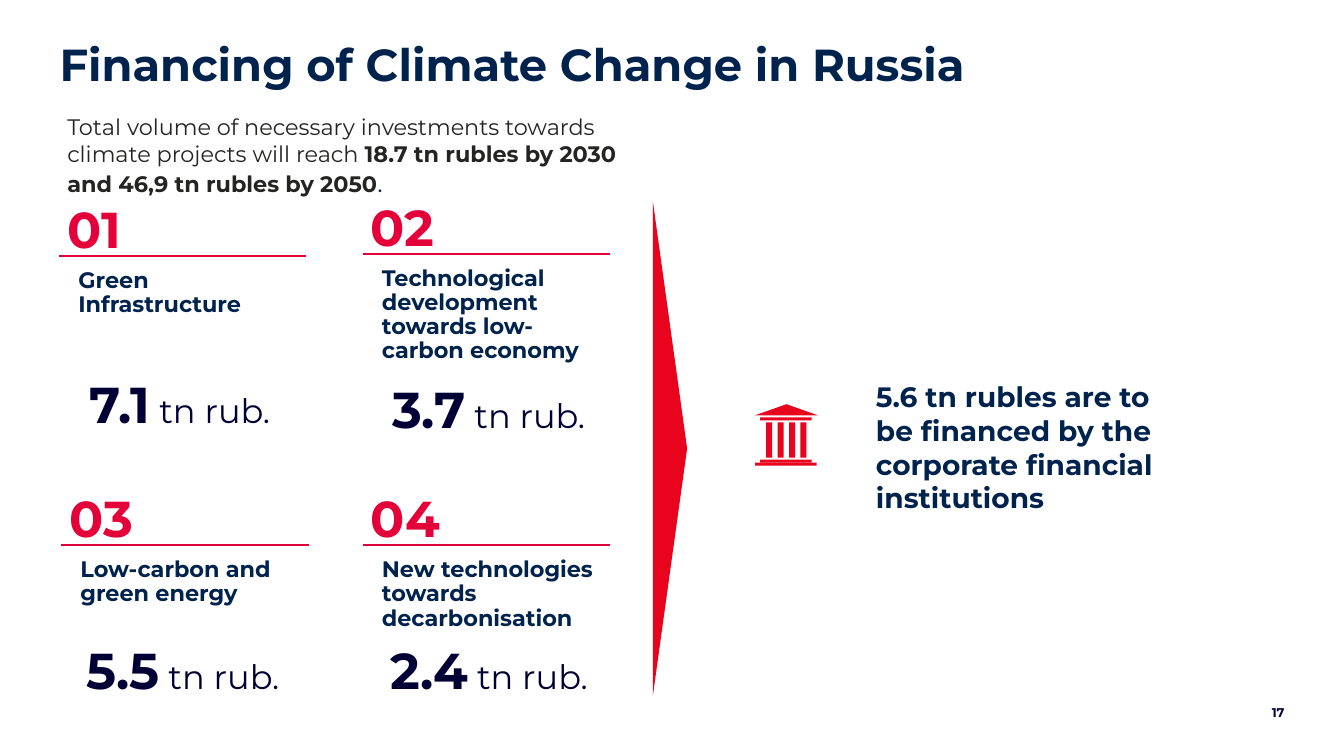
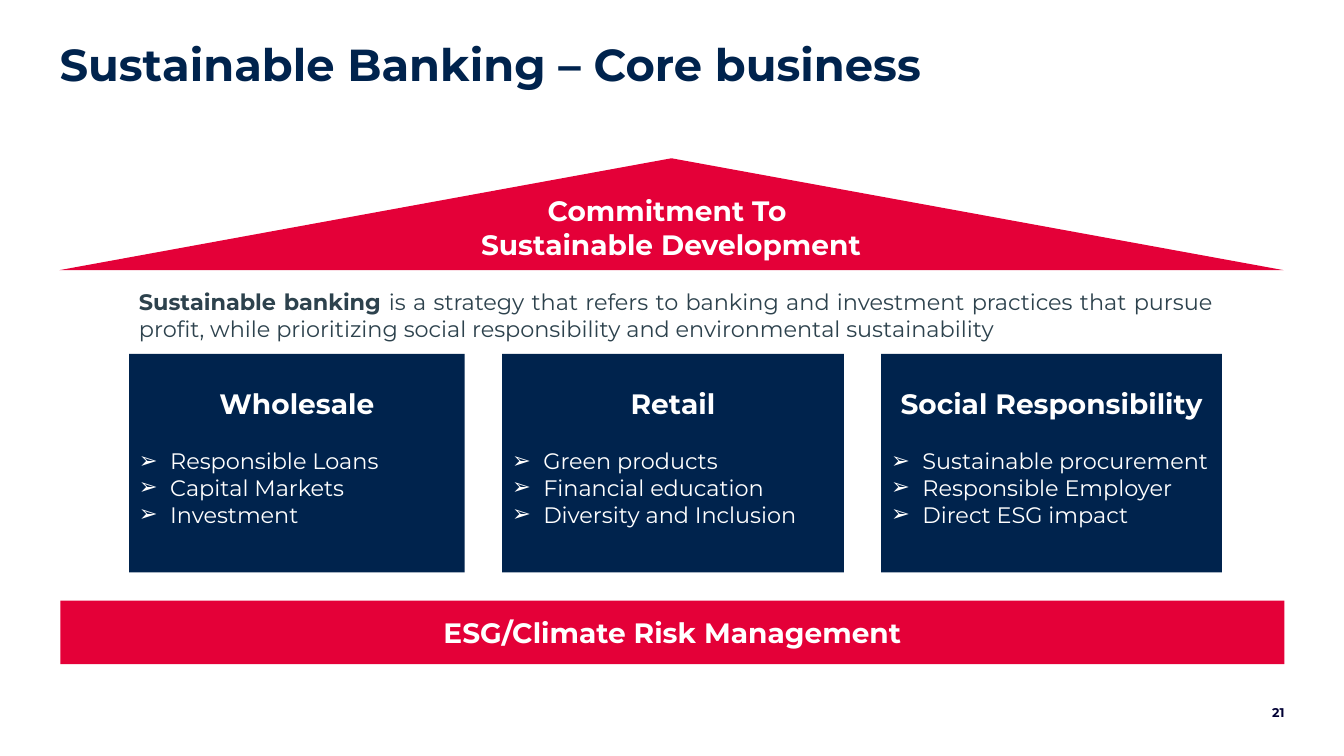
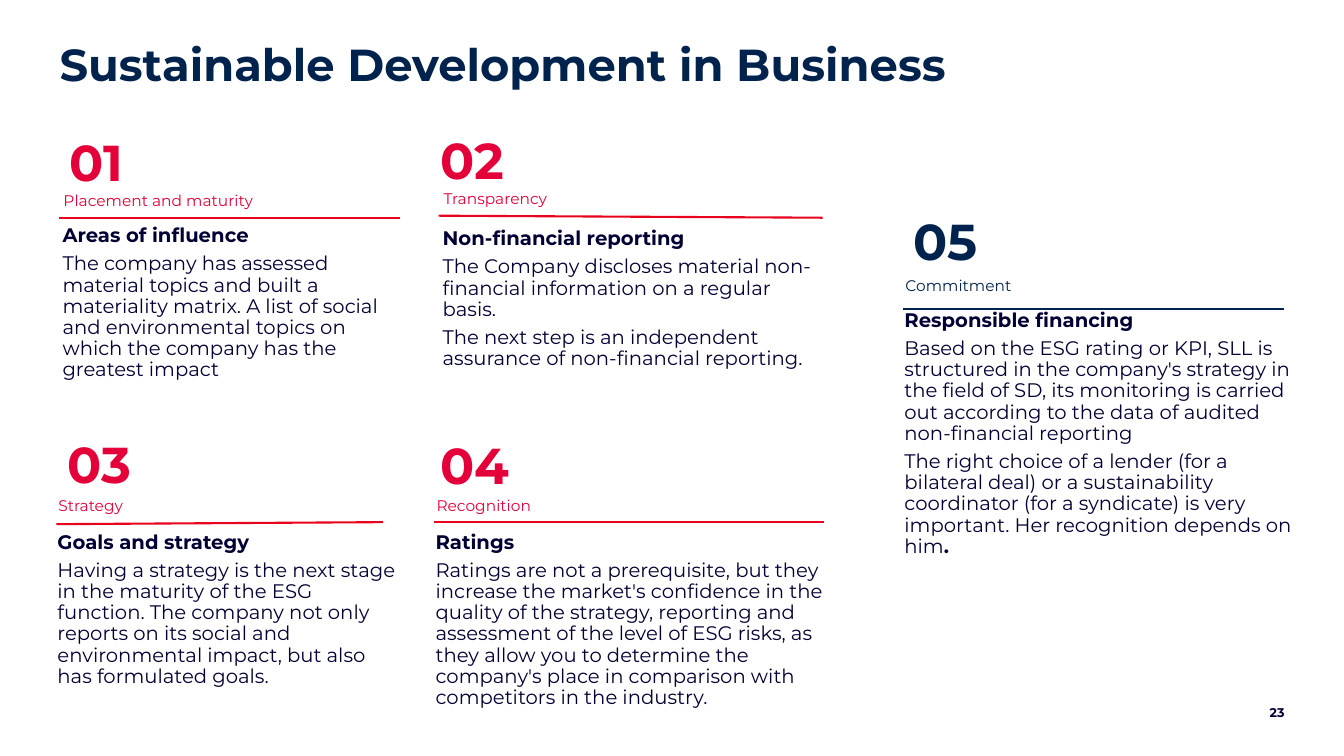
import pptx
import pptx.dml.color
import pptx.enum.shapes
import pptx.enum.text
import pptx.oxml.ns
import pptx.util
from lxml import etree

Inches = pptx.util.Inches
Pt = pptx.util.Pt
ALIGN = pptx.enum.text.PP_ALIGN
ANCHOR = pptx.enum.text.MSO_ANCHOR
AUTO_SIZE = pptx.enum.text.MSO_AUTO_SIZE
SHAPE = pptx.enum.shapes.MSO_SHAPE

FONT = "Montserrat"
TITLE_ONLY = 5
COLORS = {
    "navy": "00234D",
    "ink": "010034",
    "crimson": "E40038",
    "red": "E9041E",
    "graphite": "242423",
    "slate": "2D424D",
    "white": "FFFFFF",
}

INVESTMENTS = [
    ("01", "Green Infrastructure", "7.1", (0.59, 2.54), (0.2, 1.11, 2.05)),
    ("02", "Technological development towards low-carbon economy", "3.7",
     (3.6, 2.52), (0.19, 1.18, 2.15)),
    ("03", "Low-carbon and green energy", "5.5", (0.61, 5.41), (0.15, 0.88, 2.13)),
    ("04", "New technologies towards decarbonisation", "2.4",
     (3.6, 5.41), (0.17, 0.88, 2.18)),
]

PILLARS = [
    ("Wholesale", ["Responsible Loans", "Capital Markets", "Investment"],
     (1.28, 3.51, 3.33, 2.17)),
    ("Retail", ["Green products", "Financial education", "Diversity and Inclusion"],
     (4.98, 3.51, 3.39, 2.17)),
    ("Social Responsibility",
     ["Sustainable procurement", "Responsible Employer", "Direct ESG impact"],
     (8.74, 3.51, 3.38, 2.17)),
]

TOPICS = [
    {"number": "01", "label": "Placement and maturity", "heading": "Areas of influence",
     "body": ["The company has assessed material topics and built a materiality matrix. "
              "A list of social and environmental topics on which the company has the "
              "greatest impact"],
     "box": (0.62, 2.24, 3.35, 1.9), "label_rise": 0.32, "number_shift": (-0.03, -0.92),
     "rule": (0.59, 2.16, 3.97, 2.16)},
    {"number": "02", "label": "Transparency", "heading": "Non-financial reporting",
     "body": ["The Company discloses material non-financial information on a regular basis.",
              "The next step is an independent assurance of non-financial reporting."],
     "box": (4.39, 2.27, 3.77, 1.76), "label_rise": 0.37, "number_shift": (-0.12, -0.97),
     "rule": (4.35, 2.14, 8.16, 2.16)},
    {"number": "03", "label": "Strategy", "heading": "Goals and strategy",
     "body": ["Having a strategy is the next stage in the maturity of the ESG function. "
              "The company not only reports on its social and environmental impact, but "
              "also has formulated goals."],
     "box": (0.57, 5.28, 3.4, 2.31), "label_rise": 0.34, "number_shift": (0, -0.96),
     "rule": (0.56, 5.2, 3.8, 5.18)},
    {"number": "04", "label": "Recognition", "heading": "Ratings",
     "body": ["Ratings are not a prerequisite, but they increase the market's confidence "
              "in the quality of the strategy, reporting and assessment of the level of "
              "ESG risks, as they allow you to determine the company's place in comparison "
              "with competitors in the industry."],
     "box": (4.32, 5.28, 3.85, 2.43), "label_rise": 0.34, "number_shift": (-0.05, -0.95),
     "rule": (4.3, 5.18, 8.17, 5.18)},
    {"number": "05", "label": "Commitment", "heading": "Responsible financing",
     "body": ["Based on the ESG rating or KPI, SLL is structured in the company's strategy "
              "in the field of SD, its monitoring is carried out according to the data of "
              "audited non-financial reporting",
              "The right choice of a lender (for a bilateral deal) or a sustainability "
              "coordinator (for a syndicate) is very important. Her recognition depends on "
              "him"],
     "bold_end": ".", "accent": "navy", "rule_color": "navy",
     "box": (8.97, 3.08, 3.85, 2.8), "label_rise": 0.32, "number_shift": (-0.01, -0.98),
     "rule": (8.96, 3.07, 12.73, 3.07)},
]


def rgb(color):
    """Return the palette colour of that name."""
    return pptx.dml.color.RGBColor.from_string(COLORS[color])


def write(frame, paragraphs, align=ALIGN.LEFT, line=None, before=0, after=0):
    """Fill a text frame with paragraphs of (text, size, colour, bold) runs."""
    for index, runs in enumerate(paragraphs):
        paragraph = frame.add_paragraph() if index else frame.paragraphs[0]
        paragraph.alignment = align
        paragraph.space_before, paragraph.space_after = Pt(before), Pt(after)
        if line:
            paragraph.line_spacing = line
        for text, size, color, bold in runs:
            if text == "\n":
                paragraph.add_line_break()
                continue
            run = paragraph.add_run()
            run.text = text
            run.font.name, run.font.size, run.font.bold = FONT, Pt(size), bold
            run.font.color.rgb = rgb(color)


def set_insets(frame, size):
    """Give all four sides of a text frame the same inset."""
    frame.margin_left = frame.margin_right = Inches(size)
    frame.margin_top = frame.margin_bottom = Inches(size)


def add_text(slide, box, paragraphs, anchor=ANCHOR.TOP, wrap=True, inset=None, **style):
    """Add a text box and write its paragraphs."""
    frame = slide.shapes.add_textbox(*map(Inches, box)).text_frame
    frame.word_wrap = wrap
    frame.auto_size = AUTO_SIZE.NONE if wrap else AUTO_SIZE.SHAPE_TO_FIT_TEXT
    frame.vertical_anchor = anchor
    if inset is not None:
        set_insets(frame, inset)
    write(frame, paragraphs, **style)


def add_block(shapes, preset, box, color):
    """Add a flat, filled preset shape without an outline."""
    block = shapes.add_shape(preset, *map(Inches, box))
    block.shadow.inherit = False
    block.fill.solid()
    block.fill.fore_color.rgb = rgb(color)
    block.line.fill.background()
    return block


def add_rule(slide, ends, color):
    """Add a thin straight line between two points."""
    rule = slide.shapes.add_connector(
        pptx.enum.shapes.MSO_CONNECTOR.STRAIGHT, *map(Inches, ends))
    rule.line.color.rgb = rgb(color)
    rule.line.width = Pt(1.5)
    properties = rule._element.spPr
    etree.SubElement(properties, pptx.oxml.ns.qn("a:effectLst"))


def add_number(slide, left, top, width, number, color="crimson"):
    """Add a large section number."""
    add_text(slide, (left, top, width, 0.75), [[(number, 36, color, True)]],
             line=0.9, before=10)


def add_titled_slide(deck, heading, page):
    """Add a slide with the shared title style and page number."""
    slide = deck.slides.add_slide(deck.slide_layouts[TITLE_ONLY])
    title = slide.shapes.title
    title.left, title.top, title.width, title.height = map(
        Inches, (0.59, 0.47, 10.89, 0.44))
    frame = title.text_frame
    frame.auto_size = AUTO_SIZE.NONE
    frame.vertical_anchor = ANCHOR.TOP
    set_insets(frame, 0)
    write(frame, [[(heading, 32, "navy", True)]], line=0.8)
    add_text(slide, (12.42, 6.92, 0.32, 0.29), [[(page, 9, "ink", True)]],
             anchor=ANCHOR.MIDDLE, inset=0, align=ALIGN.RIGHT)
    return slide


def add_investment(slide, number, name, amount, origin, amount_place):
    """Add one investment area around the left end of its rule."""
    left, top = origin
    shift_x, shift_y, width = amount_place
    add_number(slide, left - 0.02, top - 0.56, 1.02, number)
    add_text(slide, (left + 0.09, top + 0.08, 2.36, 0.99),
             [[(name, 16, "navy", True)]], line=0.9, before=6)
    add_rule(slide, (left, top, left + 2.45, top), "crimson")
    add_text(slide, (left + shift_x, top + shift_y, width, 0.71),
             [[(amount, 36, "ink", True), (" tn rub.", 24, "ink", False)]], wrap=False)


def add_bank_icon(slide, left, top):
    """Draw a bank front with roof, beam, columns and steps as one group."""
    shapes = slide.shapes.add_group_shape().shapes
    add_block(shapes, SHAPE.ISOSCELES_TRIANGLE, (left, top, 0.62, 0.11), "red")
    beam, upper_step = (0.05, 0.13, 0.51, 0.03), (0.05, 0.55, 0.51, 0.03)
    lower_step = (0, 0.58, 0.61, 0.03)
    columns = [(0.11 + 0.113 * i, 0.18, 0.06, 0.35) for i in range(4)]
    for x, y, width, height in [beam, upper_step, lower_step, *columns]:
        add_block(shapes, SHAPE.RECTANGLE, (left + x, top + y, width, height), "red")


def add_pillar(slide, heading, items, box):
    """Add one business pillar with a heading and arrow bullets."""
    frame = add_block(slide.shapes, SHAPE.RECTANGLE, box, "navy").text_frame
    frame.word_wrap = True
    frame.vertical_anchor = ANCHOR.TOP
    frame.margin_top = Inches(0.32)
    write(frame, [[(heading, 20, "white", True)]]
          + [[(item, 16, "white", False)] for item in items])
    title, *bullets = frame.paragraphs
    title.alignment = ALIGN.CENTER
    title.space_after = Pt(19.5)
    for bullet in bullets:
        properties = bullet._p.get_or_add_pPr()
        properties.set("marL", str(Inches(0.31)))
        properties.set("indent", str(-Inches(0.31)))
        etree.SubElement(properties, pptx.oxml.ns.qn("a:buFont"), typeface="Arial")
        etree.SubElement(properties, pptx.oxml.ns.qn("a:buChar"), char="➢")


def add_topic(slide, topic):
    """Add one numbered topic around the box of its body text."""
    left, top, _, _ = topic["box"]
    shift_x, shift_y = topic["number_shift"]
    accent = topic.get("accent", "crimson")
    paragraphs = [[(topic["heading"], 14, "ink", True)]]
    paragraphs += [[(text, 14, "ink", False)] for text in topic["body"]]
    if "bold_end" in topic:
        paragraphs[-1].append((topic["bold_end"], 14, "ink", True))
    add_text(slide, topic["box"], paragraphs, inset=0, line=0.9, before=5)
    add_text(slide, (left + 0.01, top - topic["label_rise"], 3.5, 0.3),
             [[(topic["label"], 11, accent, False)]], inset=0, line=0.9)
    add_rule(slide, topic["rule"], topic.get("rule_color", "red"))
    add_number(slide, left + shift_x, top + shift_y, 1.11, topic["number"], accent)


def build_financing(deck):
    """Build the slide on climate financing."""
    slide = add_titled_slide(deck, "Financing of Climate Change in Russia", "17")
    for investment in INVESTMENTS:
        add_investment(slide, *investment)
    add_text(slide, (0.57, 1.07, 5.9, 0.94), [[
        ("Total volume of necessary investments towards climate projects will reach ",
         16, "graphite", False),
        ("18.7 tn rubles by 2030 and 46,9 tn rubles by 2050", 16, "graphite", True),
        (".", 18, "navy", False)]], anchor=ANCHOR.MIDDLE, after=6)
    add_text(slide, (8.59, 3.71, 3.27, 1.45), [[
        ("5.6 tn rubles are to be financed by the corporate financial institutions",
         20, "navy", True)]], anchor=ANCHOR.MIDDLE, after=6)
    pointer = add_block(slide.shapes, SHAPE.ISOSCELES_TRIANGLE,
                        (4.19, 4.28, 4.91, 0.34), "red")
    pointer.rotation = 90
    add_bank_icon(slide, 7.49, 4.01)


def build_banking(deck):
    """Build the temple diagram of sustainable banking."""
    slide = add_titled_slide(deck, "Sustainable Banking – Core business", "21")
    add_block(slide.shapes, SHAPE.ISOSCELES_TRIANGLE, (0.59, 1.57, 12.14, 1.11), "crimson")
    add_text(slide, (4.65, 1.87, 4.01, 0.77), [[
        ("Commitment To ", 20, "white", True), ("\n", 20, "white", True),
        ("Sustainable Development", 20, "white", True)]], wrap=False, align=ALIGN.CENTER)
    add_text(slide, (1.28, 2.81, 10.85, 0.64), [[
        ("Sustainable banking ", 16, "slate", True),
        ("is a strategy that refers to banking and investment practices that pursue "
         "profit, while prioritizing social responsibility and environmental "
         "sustainability", 16, "slate", False)]], align=ALIGN.JUSTIFY)
    for pillar in PILLARS:
        add_pillar(slide, *pillar)
    base = add_block(slide.shapes, SHAPE.RECTANGLE, (0.6, 5.96, 12.14, 0.63), "crimson")
    base.text_frame.vertical_anchor = ANCHOR.MIDDLE
    write(base.text_frame, [[("ESG/Climate Risk Management", 20, "white", True)]],
          align=ALIGN.CENTER)


def build_development(deck):
    """Build the slide of five development topics."""
    slide = add_titled_slide(deck, "Sustainable Development in Business", "23")
    for topic in TOPICS:
        add_topic(slide, topic)


def main():
    """Build and save the presentation."""
    deck = pptx.Presentation()
    deck.slide_width, deck.slide_height = Inches(13.33), Inches(7.5)
    build_financing(deck)
    build_banking(deck)
    build_development(deck)
    deck.save("out.pptx")


if __name__ == "__main__":
    main()
